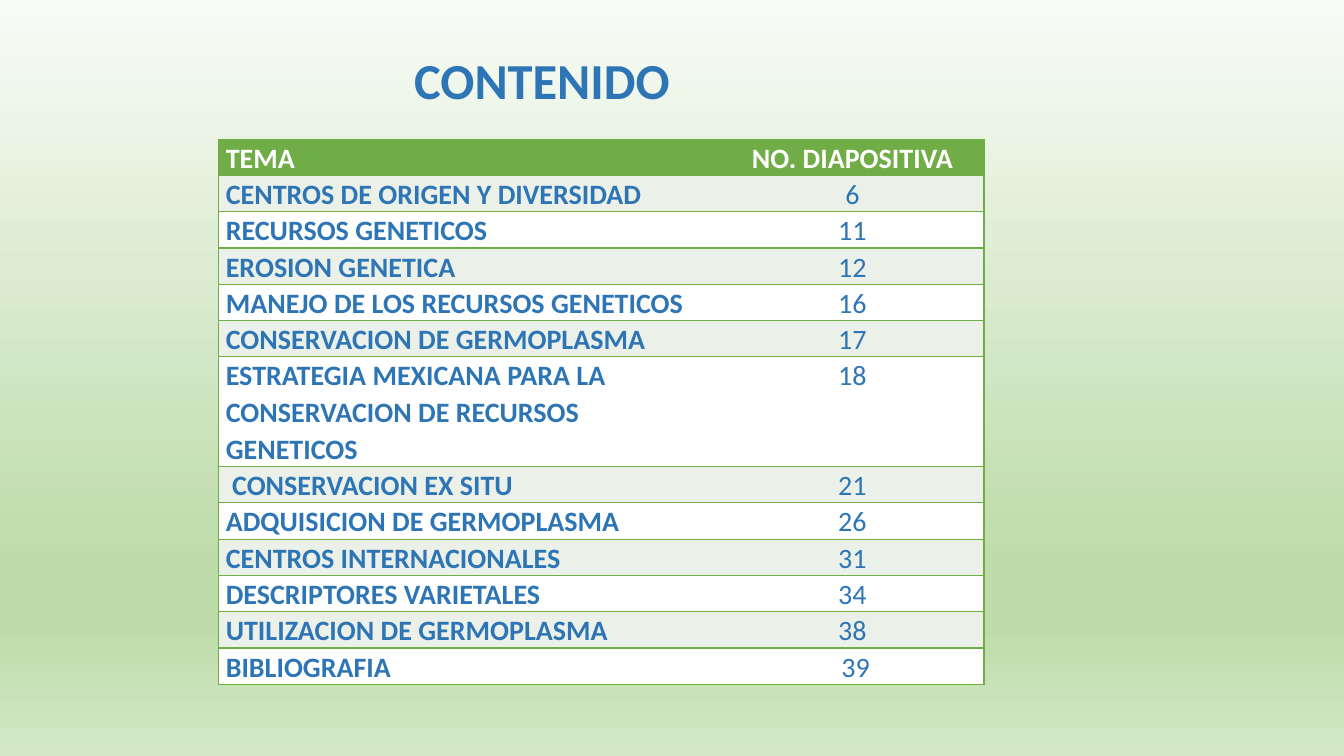
from copy import deepcopy

from lxml.etree import SubElement
from pptx import Presentation
from pptx.dml.color import RGBColor
from pptx.enum.text import MSO_ANCHOR, PP_ALIGN
from pptx.oxml.ns import qn
from pptx.util import Inches, Pt

GREEN, BLUE, WHITE, PALE = "70AD47", "2E75B6", "FFFFFF", "EBF1E9"
BACKGROUND_STOPS = [(0, "F8FBF6"), (0.74, "BEDCAA"), (0.83, "BEDCAA"), (1, "D4E8C6")]
COLUMN_WIDTHS = [4.98, 2.61]
LINE_HEIGHT = 0.36
TALL_ROW, TALL_HEIGHT = 6, 1.09
TOPICS = [
    ("TEMA", "NO. DIAPOSITIVA"),
    ("CENTROS DE ORIGEN Y DIVERSIDAD", "6"),
    ("RECURSOS GENETICOS", "11"),
    ("EROSION GENETICA", "12"),
    ("MANEJO DE LOS RECURSOS GENETICOS", "16"),
    ("CONSERVACION DE GERMOPLASMA", "17"),
    ("ESTRATEGIA MEXICANA PARA LA CONSERVACION DE RECURSOS GENETICOS", "18"),
    (" CONSERVACION EX SITU", "21"),
    ("ADQUISICION DE GERMOPLASMA", "26"),
    ("CENTROS INTERNACIONALES", "31"),
    ("DESCRIPTORES VARIETALES", "34"),
    ("UTILIZACION DE GERMOPLASMA", "38"),
    ("BIBLIOGRAFIA", " 39"),
]


def color(value):
    """Return the colour for a hex string."""
    return RGBColor.from_string(value)


def apply_format(target, values):
    """Set every attribute named in a dict of format values."""
    for name, value in values.items():
        setattr(target, name, value)


def write_text(text_frame, text, size, text_color, bold, **paragraph_format):
    """Write one formatted paragraph."""
    paragraph = text_frame.paragraphs[0]
    apply_format(paragraph, paragraph_format)
    run = paragraph.add_run()
    run.text = text
    apply_format(run.font, {"name": "Calibri", "size": Pt(size), "bold": bold})
    run.font.color.rgb = color(text_color)


def paint_background(slide):
    """Fill the slide background with the vertical green gradient."""
    fill = slide.background.fill
    fill.gradient()
    fill.gradient_angle = 270
    stop_list = next(slide.element.iter(qn("a:gsLst")))
    while len(stop_list) < len(BACKGROUND_STOPS):
        stop_list.append(deepcopy(stop_list[0]))
    for stop, (position, stop_color) in zip(fill.gradient_stops, BACKGROUND_STOPS):
        stop.position = position
        stop.color.rgb = color(stop_color)


def add_title(slide, text):
    """Add the slide heading."""
    shape = slide.shapes.add_textbox(Inches(4.01), Inches(0.1), Inches(3.95), Inches(1.45))
    apply_format(shape.text_frame, {"word_wrap": True, "vertical_anchor": MSO_ANCHOR.MIDDLE})
    write_text(shape.text_frame, text, 36, BLUE, True, line_spacing=0.9)


def set_borders(cell, outer_side):
    """Draw green lines above, below and on the outer side of a cell."""
    properties = cell._tc.get_or_add_tcPr()
    for side in "LRTB":
        line = SubElement(properties, qn(f"a:ln{side}"), w=str(Pt(1)))
        if side in ("T", "B", outer_side):
            fill = SubElement(line, qn("a:solidFill"))
            SubElement(fill, qn("a:srgbClr"), val=GREEN)
        else:
            SubElement(line, qn("a:noFill"))


def format_cell(cell, text, row, column):
    """Write and style one cell according to its row and column."""
    margin = Inches(0.07)
    apply_format(cell, {"margin_left": margin, "margin_right": margin,
                        "margin_top": 0, "margin_bottom": 0})
    set_borders(cell, "LR"[column])
    cell.fill.solid()
    cell.fill.fore_color.rgb = color(GREEN if row == 0 else PALE if row % 2 else WHITE)
    write_text(cell.text_frame, text, 20, BLUE if row else WHITE, row == 0 or column == 0,
               line_spacing=1.07, alignment=PP_ALIGN.CENTER if column else PP_ALIGN.LEFT)


def add_contents_table(slide):
    """Add the table of topics and slide numbers."""
    heights = [TALL_HEIGHT if row == TALL_ROW else LINE_HEIGHT for row in range(len(TOPICS))]
    table = slide.shapes.add_table(
        len(TOPICS), len(COLUMN_WIDTHS), Inches(2.17), Inches(1.38),
        Inches(sum(COLUMN_WIDTHS)), Inches(sum(heights))).table
    for column, width in zip(table.columns, COLUMN_WIDTHS):
        column.width = Inches(width)
    for row, (topic, height) in enumerate(zip(TOPICS, heights)):
        table.rows[row].height = Inches(height)
        for column, text in enumerate(topic):
            format_cell(table.cell(row, column), text, row, column)


def main():
    """Build and save the contents slide."""
    presentation = Presentation()
    apply_format(presentation, {"slide_width": Inches(13.33), "slide_height": Inches(7.5)})
    slide = presentation.slides.add_slide(presentation.slide_layouts[6])
    paint_background(slide)
    add_title(slide, "CONTENIDO")
    add_contents_table(slide)
    presentation.save("out.pptx")


if __name__ == "__main__":
    main()
